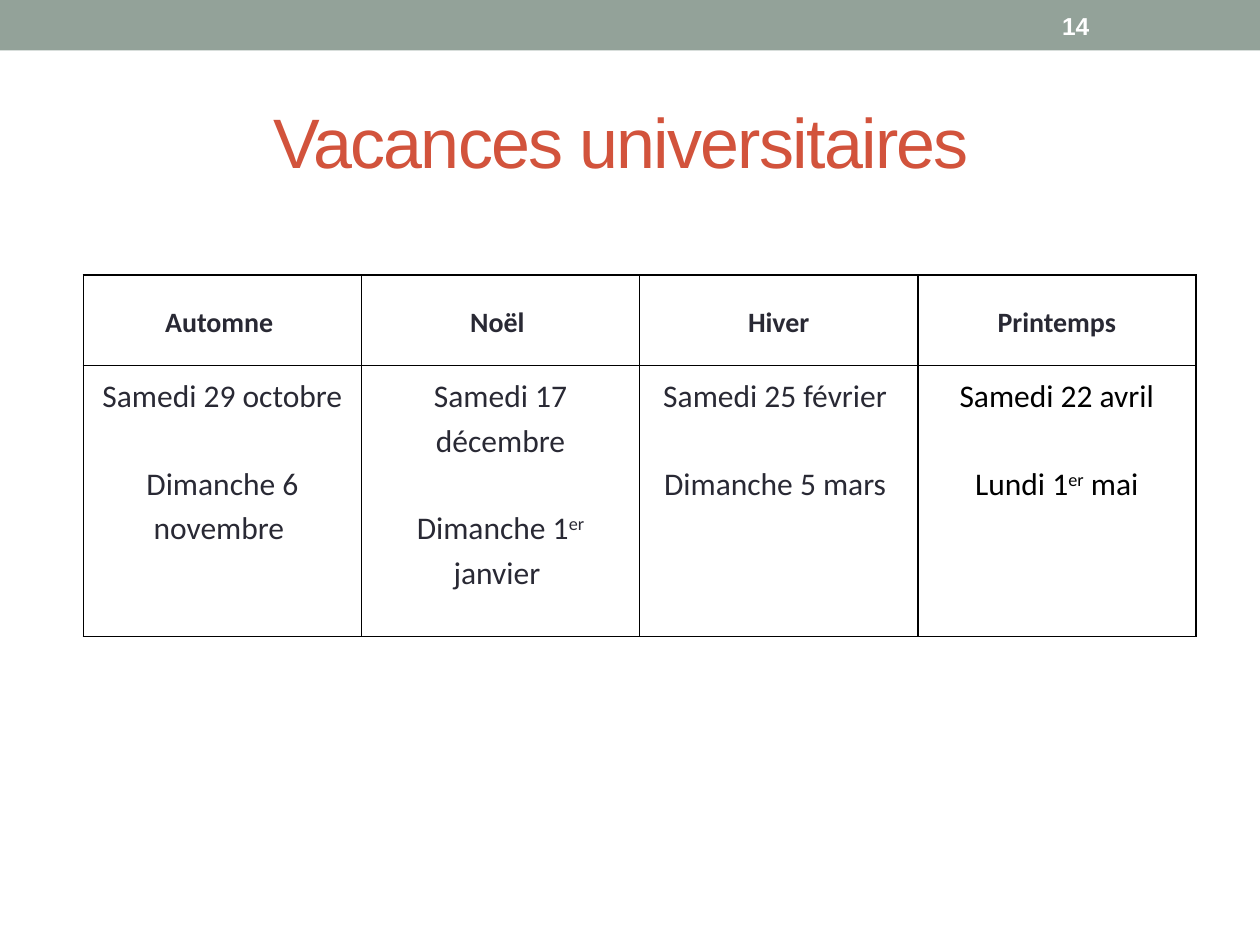
import pptx
import pptx.util
import pptx.dml.color
import pptx.enum.shapes
import pptx.enum.text
import pptx.oxml
import pptx.oxml.ns

Cm = pptx.util.Cm
Pt = pptx.util.Pt
ALIGN = pptx.enum.text.PP_ALIGN
ANCHOR = pptx.enum.text.MSO_ANCHOR

COLORS = {
    "band": "93A299",
    "title": "D2533C",
    "text": "292934",
    "black": "000000",
    "white": "FFFFFF",
}

BREAKS = [
    ("Automne ", "Samedi 29 octobre", ["Dimanche 6 novembre "], "text"),
    ("Noël ", "Samedi 17 décembre", ["Dimanche 1", "er", " janvier "], "text"),
    ("Hiver", "Samedi 25 février ", ["Dimanche 5 mars "], "text"),
    ("Printemps", "Samedi 22 avril", ["Lundi 1", "er", " mai"], "black"),
]


def color(name):
    return pptx.dml.color.RGBColor.from_string(COLORS[name])


def style(para, size, face, tint, bold=False):
    for run in para.runs:
        run.font.size = Pt(size)
        run.font.name = face
        run.font.bold = bold
        run.font.color.rgb = color(tint)


def header(slide, left, top, width, height):
    band = slide.shapes.add_shape(
        pptx.enum.shapes.MSO_SHAPE.RECTANGLE, left, top, width, height)
    band.shadow.inherit = False
    band.fill.solid()
    band.fill.fore_color.rgb = color("band")
    band.line.fill.background()

    box = slide.shapes.add_textbox(
        left + width - Cm(4.24), top + Cm(0.05), Cm(2.97), height - Cm(0.1))
    frame = box.text_frame
    frame.word_wrap = True
    frame.vertical_anchor = ANCHOR.MIDDLE
    frame.text = "14"
    style(frame.paragraphs[0], 14, "Arial", "white", True)


def heading(slide, left, top, width, height):
    title = slide.shapes.title
    title.left, title.top, title.width, title.height = left, top, width, height
    frame = title.text_frame
    frame.text = "Vacances universitaires "
    frame.vertical_anchor = ANCHOR.MIDDLE
    para = frame.paragraphs[0]
    para.alignment = ALIGN.CENTER
    style(para, 40, "Arial", "title")
    para.runs[0].font._element.set("spc", "-100")


def border(cell):
    props = cell._tc.get_or_add_tcPr()
    for spot, side in enumerate(("lnL", "lnR", "lnT", "lnB")):
        props.insert(spot, pptx.oxml.parse_xml(
            f'<a:{side} {pptx.oxml.ns.nsdecls("a")} w="{Pt(0.96)}">'
            f'<a:solidFill><a:srgbClr val="{COLORS["black"]}"/></a:solidFill>'
            f'</a:{side}>'))


def write(para, parts, size, tint, bold=False):
    para.text = parts[0]
    for part in parts[1:]:
        para.add_run().text = part
    para.alignment = ALIGN.CENTER
    para.line_spacing = 1.15
    style(para, size, "Calibri", tint, bold)
    for run in para.runs:
        if run.text == "er":
            run.font._element.set("baseline", "30000")


def dates(slide, left, top, width, height):
    table = slide.shapes.add_table(
        2, len(BREAKS), left, top, width, height).table
    table.first_row = False
    table.horz_banding = False
    table.rows[0].height = Cm(1.83)
    table.rows[1].height = height - Cm(1.83)
    for cell in table.iter_cells():
        cell.margin_left = cell.margin_right = Cm(0.18)
        cell.margin_top = cell.margin_bottom = Cm(0.13)
        cell.fill.background()
        border(cell)
    for col, (name, start, end, tint) in enumerate(BREAKS):
        head, body = table.cell(0, col), table.cell(1, col)
        head.vertical_anchor = ANCHOR.MIDDLE
        write(head.text_frame.paragraphs[0], [name], 16, "text", True)
        write(body.text_frame.paragraphs[0], [start], 18, tint)
        last = body.text_frame.add_paragraph()
        write(last, end, 18, tint)
        last.space_before = Pt(25)


def main():
    deck = pptx.Presentation()
    deck.slide_width, deck.slide_height = Cm(25.4), Cm(19.05)
    slide = deck.slides.add_slide(deck.slide_layouts[5])
    header(slide, 0, 0, deck.slide_width, Cm(1.02))
    heading(slide, Cm(1.27), Cm(1.47), Cm(22.86), Cm(2.74))
    dates(slide, Cm(1.68), Cm(5.54), Cm(22.43), Cm(7.29))
    deck.save("out.pptx")


if __name__ == "__main__":
    main()
